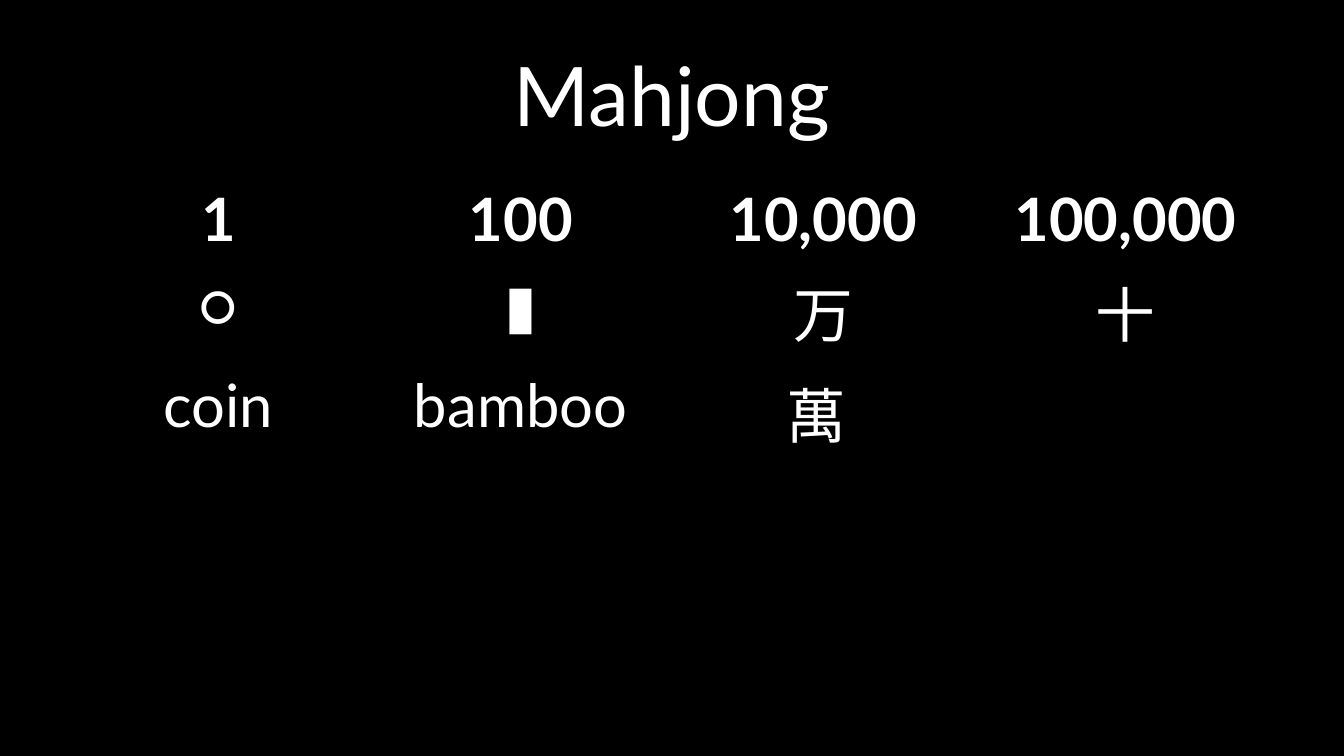
from lxml.etree import SubElement
from pptx import Presentation
from pptx.dml.color import RGBColor
from pptx.enum.text import MSO_ANCHOR, PP_ALIGN
from pptx.oxml.ns import qn
from pptx.util import Inches, Pt

TITLE = "Mahjong"
ROWS = [
    (0.63, ["1", "100", "10,000", "100,000"]),
    (0.75, ["○", "▮", "万", "十"]),
    (0.74, ["coin", "bamboo", "萬 ", ""]),
    (0.41, ["", "", "", ""]),
]
BLACK, WHITE = "000000", "FFFFFF"
WIDE = 10
HIGH = WIDE * 9 / 16
LEFT, SPAN = 0.5, 9
TOP = 1.31


def color(code):
    return RGBColor.from_string(code)


def write(frame, text, size, bold=False):
    part = frame.paragraphs[0]
    part.alignment = PP_ALIGN.CENTER
    if not text:
        return
    run = part.add_run()
    run.text = text
    form = {"name": "Lato", "size": Pt(size), "bold": bold}
    for key, value in form.items():
        setattr(run.font, key, value)
    run.font.color.rgb = color(WHITE)


def paint(cell):
    props = cell._tc.get_or_add_tcPr()
    for side in ("lnL", "lnR", "lnT", "lnB"):
        line = SubElement(props, qn(f"a:{side}"), w="0")
        SubElement(line, qn("a:noFill"))
    cell.fill.solid()
    cell.fill.fore_color.rgb = color(BLACK)


def main():
    deck = Presentation()
    deck.slide_width, deck.slide_height = Inches(WIDE), Inches(HIGH)
    slide = deck.slides.add_slide(deck.slide_layouts[6])
    slide.background.fill.solid()
    slide.background.fill.fore_color.rgb = color(BLACK)

    box = slide.shapes.add_textbox(
        Inches(LEFT), Inches(0.23), Inches(SPAN), Inches(0.94))
    frame = box.text_frame
    form = {"word_wrap": True, "vertical_anchor": MSO_ANCHOR.MIDDLE}
    for key, value in form.items():
        setattr(frame, key, value)
    write(frame, TITLE, 44)

    total = sum(tall for tall, _ in ROWS)
    grid = slide.shapes.add_table(
        len(ROWS), len(ROWS[0][1]), Inches(LEFT), Inches(TOP),
        Inches(SPAN), Inches(total)).table
    for r, (tall, row) in enumerate(ROWS):
        grid.rows[r].height = Inches(tall)
        for c, text in enumerate(row):
            cell = grid.cell(r, c)
            paint(cell)
            write(cell.text_frame, text, 32, r == 0)

    deck.save("out.pptx")


if __name__ == "__main__":
    main()
